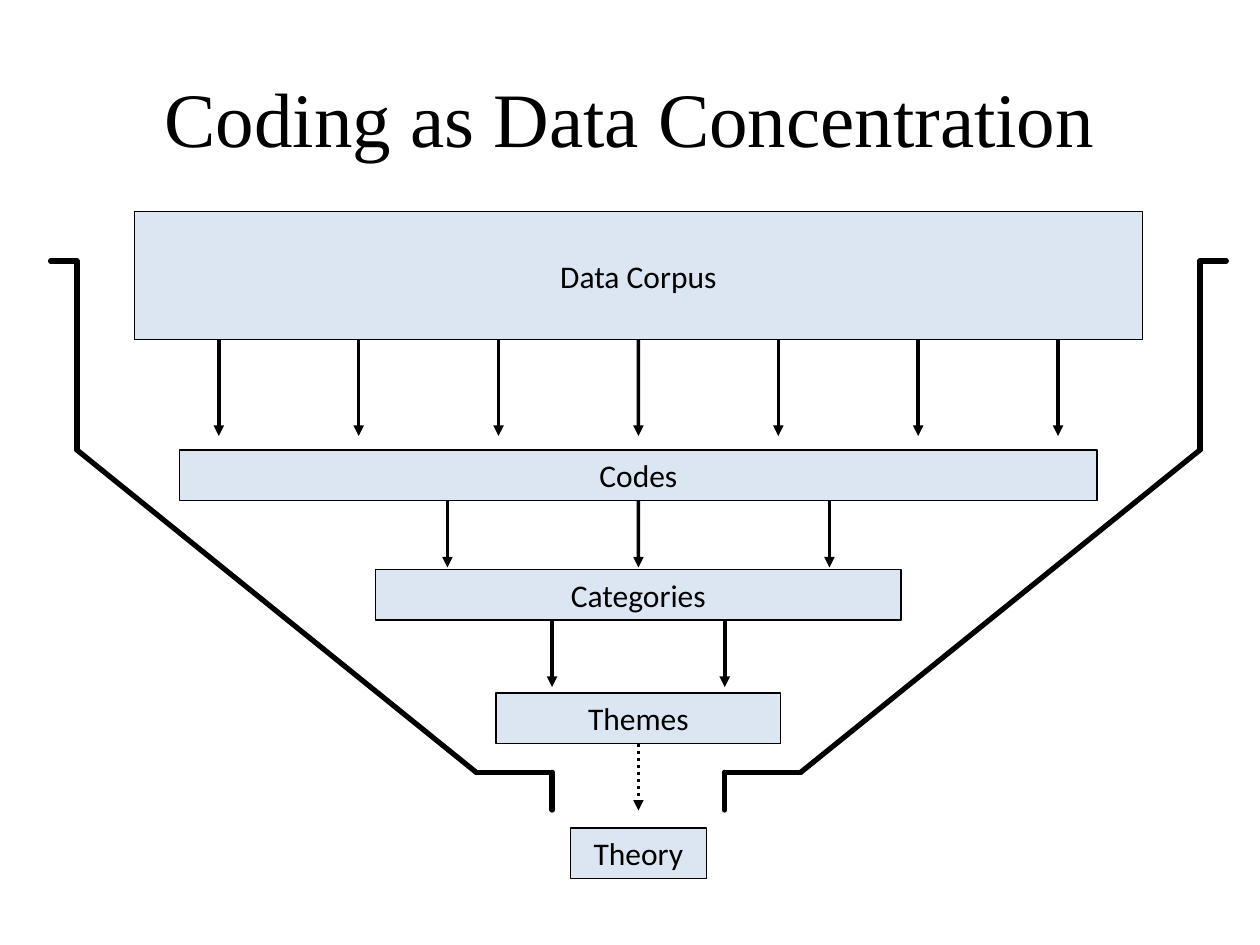
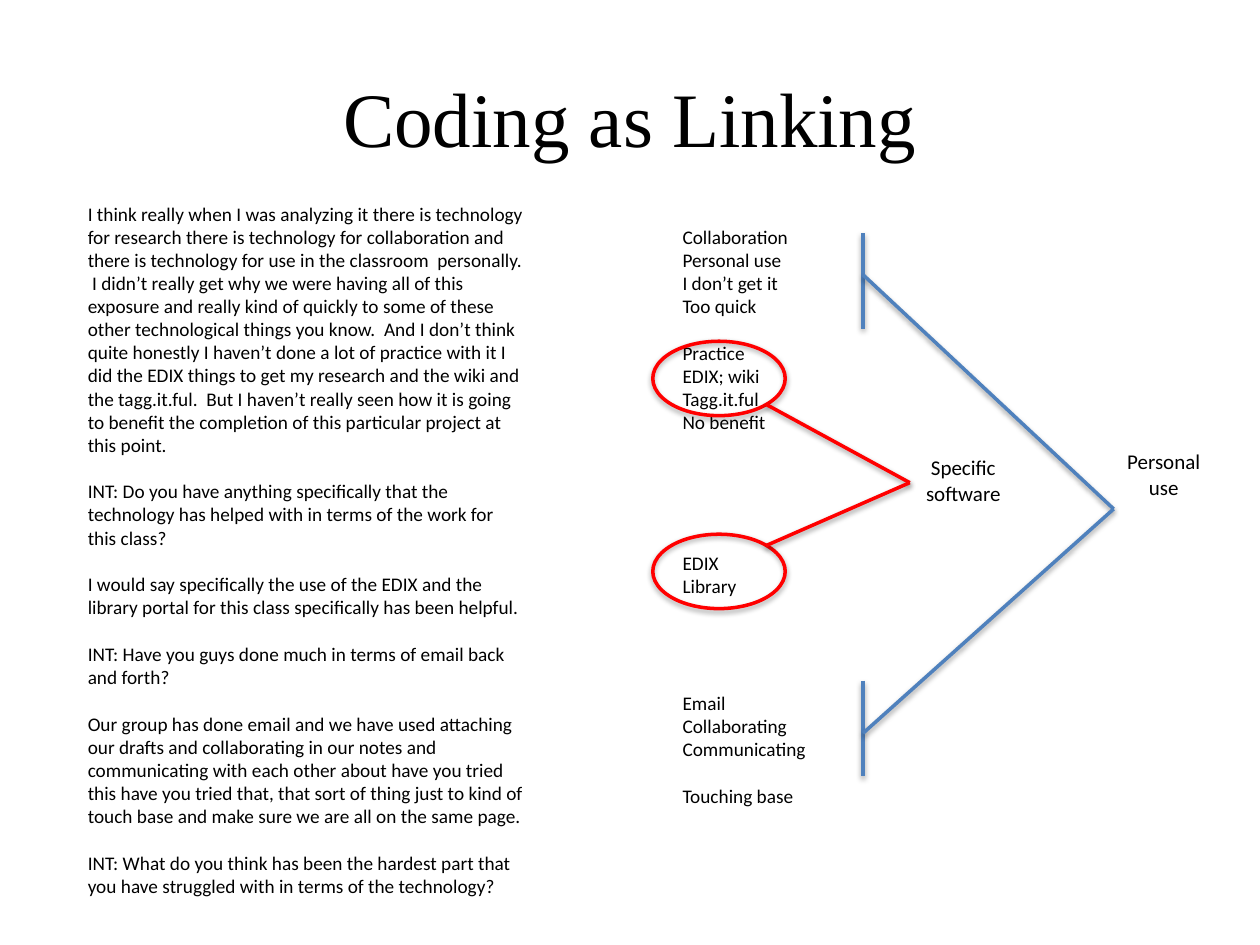
from dataclasses import dataclass
from itertools import pairwise
from typing import Optional

from lxml.etree import SubElement
from pptx import Presentation
from pptx.dml.color import RGBColor
from pptx.enum.dml import MSO_LINE
from pptx.enum.shapes import MSO_CONNECTOR, MSO_SHAPE
from pptx.enum.text import MSO_ANCHOR, PP_ALIGN
from pptx.oxml.ns import qn
from pptx.util import Cm, Pt

BLACK = RGBColor(0x00, 0x00, 0x00)
WHITE = RGBColor(0xFF, 0xFF, 0xFF)
PALE_BLUE = RGBColor(0xDC, 0xE6, 0xF2)
BLUE = RGBColor(0x4F, 0x81, 0xBD)
RED = RGBColor(0xFF, 0x00, 0x00)

BODY_FONT = "Calibri"
TITLE_FONT = "Times New Roman"
SMALL_LINE = 13.4  # height of one 11 pt line, in points
CENTRE = 12.87  # axis of the funnel, in cm

Point = tuple[float, float]


@dataclass(frozen=True)
class Box:
    """A place on the slide, in cm."""
    left: float
    top: float
    width: float
    height: float

    @property
    def bottom(self) -> float:
        return self.top + self.height

    def lengths(self) -> tuple:
        return Cm(self.left), Cm(self.top), Cm(self.width), Cm(self.height)


@dataclass(frozen=True)
class Stage:
    """A bar of the funnel and the arrows that leave it."""
    label: str
    top: float
    width: float
    height: float = 1.02
    arrows: int = 0
    pitch: float = 0
    drop: float = 1.35
    dash: Optional[MSO_LINE] = None

    @property
    def box(self) -> Box:
        return Box(CENTRE - self.width / 2, self.top, self.width, self.height)


@dataclass(frozen=True)
class Block:
    """Lines of text below a gap counted in lines."""
    gap: int
    lines: tuple[str, ...]


@dataclass(frozen=True)
class Link:
    """Starting points that meet in one labelled tip."""
    label: str
    label_box: Box
    starts: tuple[Point, ...]
    tip: Point
    color: RGBColor


STAGES = (
    Stage("Data Corpus", 4.27, 20.32, height=2.57, arrows=7, pitch=2.82, drop=1.95),
    Stage("Codes", 9.07, 18.49, arrows=3, pitch=3.85),
    Stage("Categories", 11.48, 10.59, arrows=2, pitch=3.48),
    Stage("Themes", 13.97, 5.74, arrows=1, dash=MSO_LINE.ROUND_DOT),
    Stage("Theory", 16.69, 2.74),
)
FUNNEL_WALL = ((1.02, 5.26), (1.55, 5.26), (1.55, 9.07),
               (9.6, 15.57), (11.13, 15.57), (11.13, 16.33))

TRANSCRIPT = (
    "I think really when I was analyzing it there is technology for research there is "
    "technology for collaboration and there is technology for use in the classroom  "
    "personally.  I didn’t really get why we were having all of this exposure and really "
    "kind of quickly to some of these other technological things you know.  And I don’t "
    "think quite honestly I haven’t done a lot of practice with it I did the EDIX things "
    "to get my research and the wiki and the tagg.it.ful.  But I haven’t really seen how "
    "it is going to benefit the completion of this particular project at this point.",
    "INT: Do you have anything specifically that the technology has helped with in terms "
    "of the work for this class?",
    "I would say specifically the use of the EDIX and the library portal for this class "
    "specifically has been helpful.",
    "INT: Have you guys done much in terms of email back and forth?",
    "Our group has done email and we have used attaching our drafts and collaborating in "
    "our notes and communicating with each other about have you tried this have you tried "
    "that, that sort of thing just to kind of touch base and make sure we are all on the "
    "same page.",
    "INT: What do you think has been the hardest part that you have struggled with in "
    "terms of the technology?",
)
TRANSCRIPT_BLOCKS = tuple(Block(int(i > 0), (speech,)) for i, speech in enumerate(TRANSCRIPT))
CODE_BLOCKS = (
    Block(1, ("Collaboration", "Personal use", "I don’t get it", "Too quick")),
    Block(1, ("Practice", "EDIX; wiki", "Tagg.it.ful", "No benefit")),
    Block(5, ("EDIX", "Library")),
    Block(4, ("Email", "Collaborating", "Communicating")),
    Block(1, ("Touching base",)),
)

BRACKET_X = 17.4
BRACKET_TOPS = (4.7, 13.72)
BRACKET_HEIGHT = 1.93
RING_TOPS = (6.88, 10.77)
LINKS = (
    Link("Personal use", Box(22.23, 8.92, 2.46, 2.06),
         ((BRACKET_X, 5.54), (BRACKET_X, 14.78)), (22.45, 10.26), BLUE),
    Link("Specific software", Box(18.19, 9.04, 2.46, 2.06),
         ((15.44, 8.15), (15.44, 11.0)), (18.34, 9.73), RED),
)


def write(shape, blocks, *, size=18.0, font=BODY_FONT, align=PP_ALIGN.CENTER,
          anchor=MSO_ANCHOR.MIDDLE) -> None:
    """Fill a shape with text: a string, or blocks with gaps between them."""
    if isinstance(blocks, str):
        blocks = (Block(0, (blocks,)),)
    frame = shape.text_frame
    frame.word_wrap = True
    frame.vertical_anchor = anchor
    frame.margin_top = Cm(0.13) + Pt(blocks[0].gap * SMALL_LINE)
    paragraph = None
    for block in blocks:
        for index, line in enumerate(block.lines):
            first = paragraph is None
            paragraph = frame.paragraphs[0] if first else frame.add_paragraph()
            paragraph.alignment = align
            if index == 0 and not first:
                paragraph.space_before = Pt(block.gap * SMALL_LINE)
            run = paragraph.add_run()
            run.text = line
            run.font.size = Pt(size)
            run.font.name = font
            run.font.color.rgb = BLACK


def add_text_box(slide, box: Box, blocks, **text_format):
    text_box = slide.shapes.add_textbox(*box.lengths())
    write(text_box, blocks, **text_format)
    return text_box


def add_shadow(effects, opacity: int) -> None:
    """Put a soft shadow straight below into an effect list."""
    shadow = SubElement(effects, qn("a:outerShdw"), blurRad="40000", dist="20000",
                        dir="5400000", rotWithShape="0")
    black = SubElement(shadow, qn("a:srgbClr"), val=str(BLACK))
    SubElement(black, qn("a:alpha"), val=str(opacity * 1000))


def add_outline_shape(slide, kind, box: Box, *, line: RGBColor, weight: float,
                      fill: Optional[RGBColor] = None, shadow: int = 0):
    shape = slide.shapes.add_shape(kind, *box.lengths())
    shape.shadow.inherit = False
    if fill is None:
        shape.fill.background()
    else:
        shape.fill.solid()
        shape.fill.fore_color.rgb = fill
    shape.line.color.rgb = line
    shape.line.width = Pt(weight)
    if shadow:
        add_shadow(shape._element.spPr.find(qn("a:effectLst")), shadow)
    return shape


def add_line(slide, start: Point, end: Point, *, color=BLACK, weight=2.0, arrow=False,
             dash=None, round_cap=False, shadow=0):
    line = slide.shapes.add_connector(MSO_CONNECTOR.STRAIGHT, *map(Cm, start + end))
    line.line.color.rgb = color
    line.line.width = Pt(weight)
    if dash is not None:
        line.line.dash_style = dash
    properties = line._element.spPr
    outline = properties.find(qn("a:ln"))
    if round_cap:
        outline.set("cap", "rnd")
    if arrow:
        SubElement(outline, qn("a:tailEnd"), type="triangle")
    effects = SubElement(properties, qn("a:effectLst"))
    if shadow:
        add_shadow(effects, shadow)
    return line


def add_titled_slide(deck, title: str):
    slide = deck.slides.add_slide(deck.slide_layouts[6])
    slide.background.fill.solid()
    slide.background.fill.fore_color.rgb = WHITE
    add_text_box(slide, Box(1.27, 0.76, 22.86, 3.18), title, size=44, font=TITLE_FONT)
    return slide


def add_stage(slide, stage: Stage) -> None:
    bar = add_outline_shape(slide, MSO_SHAPE.RECTANGLE, stage.box,
                            fill=PALE_BLUE, line=BLACK, weight=0.75)
    write(bar, stage.label)
    for index in range(stage.arrows):
        offset = index - (stage.arrows - 1) / 2
        x = CENTRE + offset * stage.pitch
        bottom = stage.box.bottom
        arrow = add_line(slide, (x, bottom), (x, bottom + stage.drop),
                         arrow=True, dash=stage.dash)
        if offset == 0:
            arrow.begin_connect(bar, 2)


def build_concentration(deck) -> None:
    slide = add_titled_slide(deck, "Coding as Data Concentration")
    for stage in STAGES:
        add_stage(slide, stage)
    # Funnel: the left wall and its mirror image
    mirrored = tuple((2 * CENTRE - x, y) for x, y in FUNNEL_WALL)
    for wall in (FUNNEL_WALL, mirrored):
        for start, end in pairwise(wall):
            add_line(slide, start, end, weight=3, round_cap=True)


def build_linking(deck) -> None:
    slide = add_titled_slide(deck, "Coding as Linking")
    # Interview and its codes
    for box, blocks in ((Box(1.52, 3.94, 9.32, 14.83), TRANSCRIPT_BLOCKS),
                        (Box(13.51, 3.94, 9.32, 12.47), CODE_BLOCKS)):
        column = add_text_box(slide, box, blocks, size=11, align=PP_ALIGN.LEFT,
                              anchor=MSO_ANCHOR.TOP)
        column.fill.solid()
        column.fill.fore_color.rgb = WHITE
    # Marks beside and around the codes
    for top in BRACKET_TOPS:
        add_line(slide, (BRACKET_X, top), (BRACKET_X, top + BRACKET_HEIGHT),
                 color=BLUE, shadow=38)
    for top in RING_TOPS:
        add_outline_shape(slide, MSO_SHAPE.OVAL, Box(13.16, top, 2.67, 1.5),
                          line=RED, weight=2, shadow=35)
    # Links to the shared theme
    for link in LINKS:
        for start in link.starts:
            add_line(slide, start, link.tip, color=link.color, shadow=38)
        add_text_box(slide, link.label_box, link.label, size=12, anchor=MSO_ANCHOR.TOP)


def main() -> None:
    deck = Presentation()
    deck.slide_width, deck.slide_height = Cm(25.4), Cm(19.05)
    build_concentration(deck)
    build_linking(deck)
    deck.save("out.pptx")


if __name__ == "__main__":
    main()
